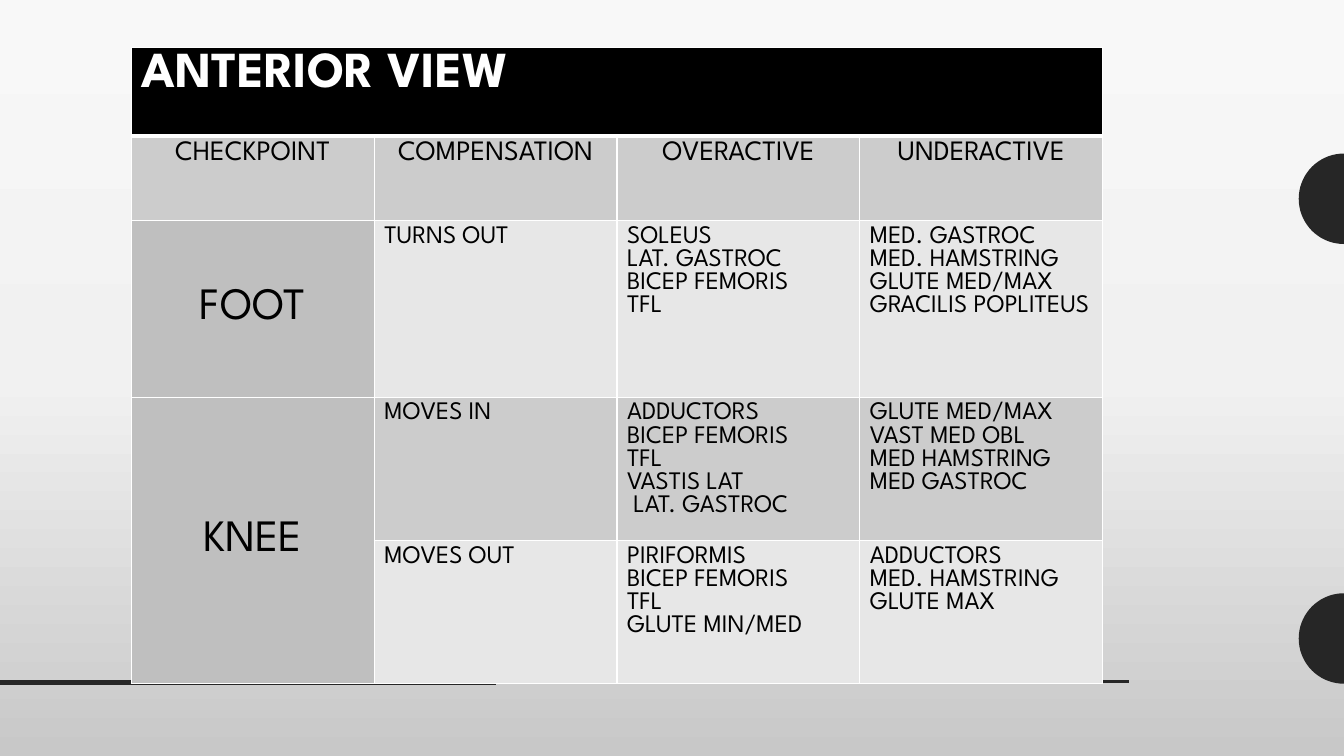
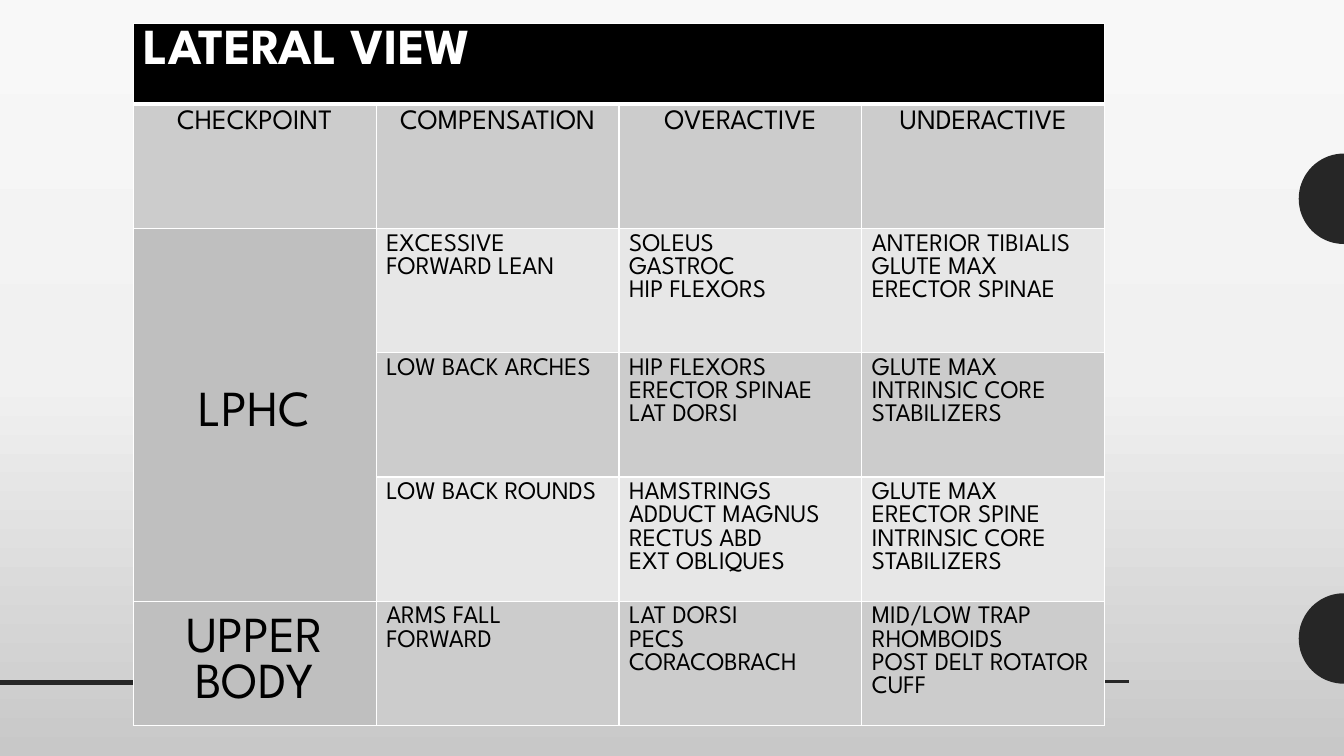
from copy import deepcopy
from math import cos, pi, sin

from lxml import etree
from pptx import Presentation
from pptx.dml.color import RGBColor
from pptx.enum.shapes import MSO_CONNECTOR
from pptx.enum.text import MSO_ANCHOR, PP_ALIGN
from pptx.oxml.ns import qn
from pptx.util import Cm, Pt

STRAIGHT = MSO_CONNECTOR.STRAIGHT
TOP, MIDDLE = MSO_ANCHOR.TOP, MSO_ANCHOR.MIDDLE
LEFT, CENTER = PP_ALIGN.LEFT, PP_ALIGN.CENTER

COLORS = {
    "sky": "F8F8F8", "haze": "F1F1F1", "ground": "C8C8C8",
    "ornament": "262626", "banner": "000000", "banner_text": "FFFFFF",
    "text": "000000", "checkpoint": "BFBFBF", "dark_band": "CCCCCC",
    "light_band": "E7E7E7", "border": "FFFFFF",
}
FONT = "League Spartan"
SLIDE_WIDTH, SLIDE_HEIGHT = 33.87, 19.05
COLUMN_WIDTH = 6.12
HEADINGS = ["CHECKPOINT", "COMPENSATION", "OVERACTIVE", "UNDERACTIVE"]

ANTERIOR = [
    ["FOOT", "TURNS OUT", "SOLEUS\nLAT. GASTROC\nBICEP FEMORIS\nTFL",
     "MED. GASTROC\nMED. HAMSTRING\nGLUTE MED/MAX\nGRACILIS POPLITEUS"],
    ["KNEE", "MOVES IN",
     "ADDUCTORS\nBICEP FEMORIS\nTFL\nVASTIS LAT\n LAT. GASTROC",
     "GLUTE MED/MAX\nVAST MED OBL\nMED HAMSTRING\nMED GASTROC"],
    [None, "MOVES OUT", "PIRIFORMIS\nBICEP FEMORIS\nTFL\nGLUTE MIN/MED",
     "ADDUCTORS\nMED. HAMSTRING\nGLUTE MAX"],
]
LATERAL = [
    ["LPHC", "EXCESSIVE FORWARD LEAN", "SOLEUS\nGASTROC\nHIP FLEXORS",
     "ANTERIOR TIBIALIS GLUTE MAX ERECTOR SPINAE"],
    [None, "LOW BACK ARCHES", "HIP FLEXORS\nERECTOR SPINAE LAT DORSI",
     "GLUTE MAX INTRINSIC CORE STABILIZERS"],
    [None, "LOW BACK ROUNDS",
     "HAMSTRINGS\nADDUCT MAGNUS\nRECTUS ABD\nEXT OBLIQUES",
     "GLUTE MAX ERECTOR SPINE INTRINSIC CORE STABILIZERS"],
    ["UPPER BODY", "ARMS FALL FORWARD", "LAT DORSI\nPECS CORACOBRACH",
     "MID/LOW TRAP\nRHOMBOIDS\nPOST DELT ROTATOR CUFF"],
]


def color(name):
    """Return the named palette colour."""
    return RGBColor.from_string(COLORS[name])


def set_background(master):
    """Give every slide the vertical grey gradient."""
    fill = master.background.fill
    fill.gradient()
    fill.gradient_angle = 270
    stop_list = master.element.find(".//" + qn("a:gsLst"))
    stop_list.insert(1, deepcopy(stop_list[0]))
    names = ["sky", "haze", "ground"]
    for stop, name, position in zip(fill.gradient_stops, names, [0, 0.5, 1]):
        stop.color.rgb = color(name)
        stop.position = position


def add_half_disc(page, center, radius=1.14, steps=36):
    """Draw a half disc against the right edge of the page."""
    angles = [pi * step / steps for step in range(steps + 1)]
    points = [(Cm(SLIDE_WIDTH - radius * sin(angle)),
               Cm(center - radius * cos(angle))) for angle in angles]
    builder = page.shapes.build_freeform(*points[0])
    builder.add_line_segments(points[1:], close=True)
    disc = builder.convert_to_shape()
    disc.shadow.inherit = False
    disc.fill.solid()
    disc.fill.fore_color.rgb = color("ornament")
    disc.line.fill.background()


def add_rule(page, length, top):
    """Draw a horizontal rule from the left edge of the page."""
    rule = page.shapes.add_connector(
        STRAIGHT, Cm(0), Cm(top), Cm(length), Cm(top))
    rule.line.color.rgb = color("ornament")
    rule.line.width = Pt(2)
    properties = rule.element.find(qn("p:spPr"))
    etree.SubElement(properties, qn("a:effectLst"))


def add_ornaments(page):
    """Draw the half discs and rules shared by all pages."""
    for center in (5.01, 16.09):
        add_half_disc(page, center)
    add_rule(page, 12.5, 17.22)
    add_rule(page, 28.45, 17.17)


def set_borders(cell, top=1, bottom=1):
    """Draw the four borders of a cell, with widths in points."""
    properties = cell._tc.get_or_add_tcPr()
    widths = {"lnL": 1, "lnR": 1, "lnT": top, "lnB": bottom}
    for index, (side, width) in enumerate(widths.items()):
        border = etree.Element(qn("a:" + side), w=str(Pt(width)))
        solid = etree.SubElement(border, qn("a:solidFill"))
        etree.SubElement(solid, qn("a:srgbClr"), val=COLORS["border"])
        properties.insert(index, border)


def write_cell(cell, text, size, align=LEFT, anchor=TOP,
               ink="text", bold=False):
    """Write each line of the text as a paragraph of the cell."""
    cell.vertical_anchor = anchor
    frame = cell.text_frame
    for index, line in enumerate(text.split("\n")):
        para = frame.add_paragraph() if index else frame.paragraphs[0]
        para.alignment = align
        span = para.add_run()
        span.text = line
        span.font.name = FONT
        span.font.size = Pt(size)
        span.font.bold = bold
        span.font.color.rgb = color(ink)


def fill_name(row, column):
    """Return the fill name that a grid place calls for."""
    if row == 0:
        return "banner"
    if column == 0 and row > 1:
        return "checkpoint"
    return "dark_band" if row % 2 else "light_band"


def style_grid(table):
    """Set the fills and borders of all cells."""
    for row_index, row in enumerate(table.rows):
        for column_index, cell in enumerate(row.cells):
            cell.fill.solid()
            cell.fill.fore_color.rgb = color(fill_name(row_index, column_index))
            set_borders(cell, top=3 if row_index == 1 else 1,
                        bottom=3 if row_index == 0 else 1)


def merge_checkpoints(table, rows):
    """Join each checkpoint cell with the unnamed ones below it."""
    starts = [index for index, row in enumerate(rows) if row[0]]
    for start, following in zip(starts, starts[1:] + [len(rows)]):
        if following - start > 1:
            table.cell(start + 2, 0).merge(table.cell(following + 1, 0))


def add_view_table(page, title, rows, position, heights, checkpoint_size):
    """Add the table of compensations for one view."""
    left, top = position
    frame = page.shapes.add_table(
        len(heights), len(HEADINGS), Cm(left), Cm(top),
        Cm(COLUMN_WIDTH * len(HEADINGS)), Cm(sum(heights)))
    table = frame.table
    table.first_row = table.horz_banding = False
    for column in table.columns:
        column.width = Cm(COLUMN_WIDTH)
    for row, height in zip(table.rows, heights):
        row.height = Cm(height)
    style_grid(table)
    table.cell(0, 0).merge(table.cell(0, len(HEADINGS) - 1))
    merge_checkpoints(table, rows)
    write_cell(table.cell(0, 0), title, 36, ink="banner_text", bold=True)
    for column, heading in enumerate(HEADINGS):
        write_cell(table.cell(1, column), heading, 20, CENTER)
    for index, (checkpoint, *details) in enumerate(rows, start=2):
        if checkpoint:
            write_cell(table.cell(index, 0), checkpoint, checkpoint_size,
                       CENTER, MIDDLE)
        for column, text in enumerate(details, start=1):
            write_cell(table.cell(index, column), text, 18)


def add_page(deck):
    """Add a blank page with the shared ornaments."""
    page = deck.slides.add_slide(deck.slide_layouts[6])
    add_ornaments(page)
    return page


def main():
    """Build and save the deck."""
    deck = Presentation()
    deck.slide_width, deck.slide_height = Cm(SLIDE_WIDTH), Cm(SLIDE_HEIGHT)
    set_background(deck.slide_master)
    add_view_table(add_page(deck), "ANTERIOR VIEW", ANTERIOR, (3.31, 1.2),
                   [2.23, 2.13, 4.45, 3.61, 3.61], 32)
    add_view_table(add_page(deck), "LATERAL VIEW", LATERAL, (3.36, 0.6),
                   [2.03] + [3.13] * 5, 36)
    deck.save("out.pptx")


if __name__ == "__main__":
    main()
